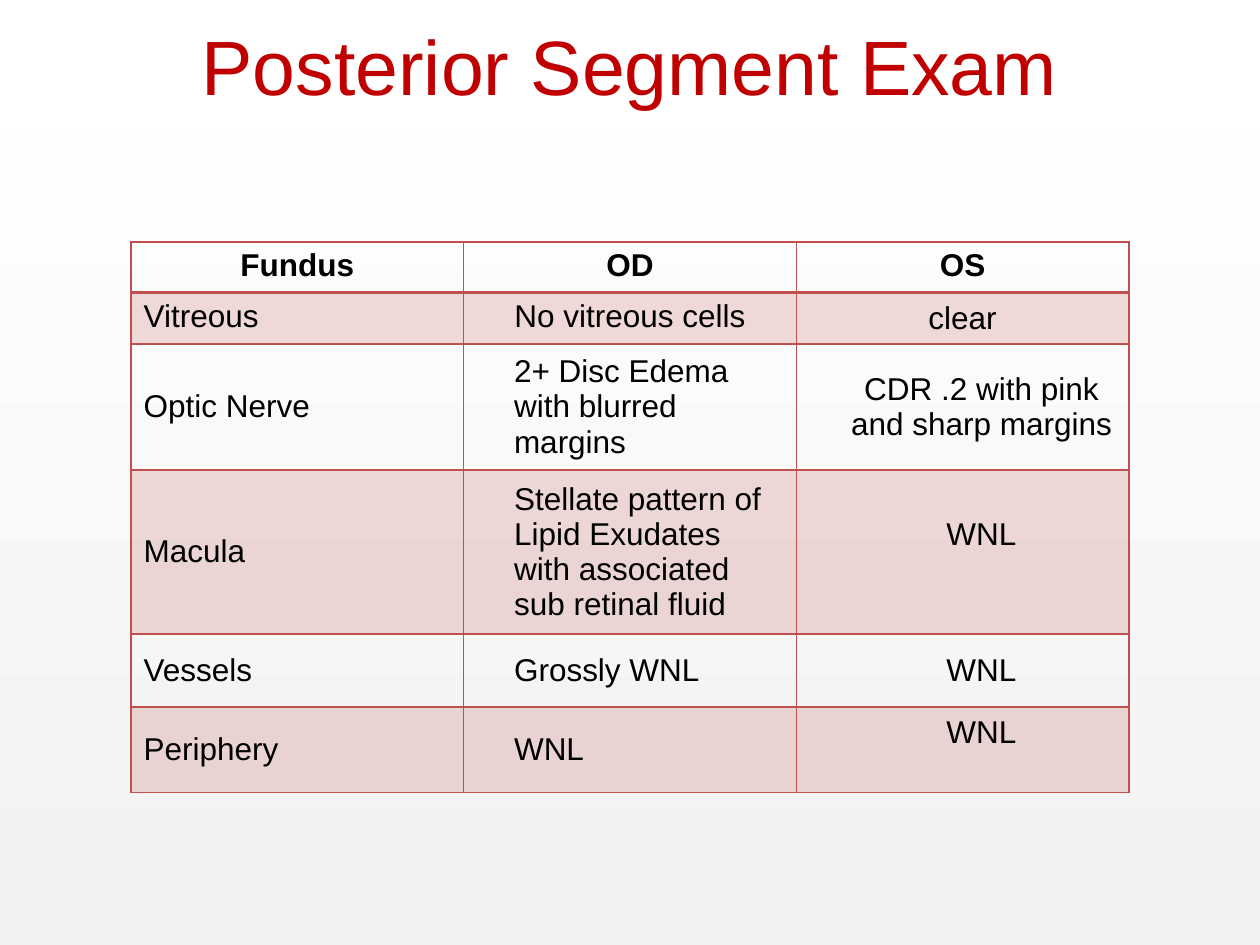
from lxml.etree import SubElement
from pptx import Presentation
from pptx.dml.color import RGBColor
from pptx.enum.shapes import MSO_SHAPE
from pptx.enum.text import MSO_ANCHOR, PP_ALIGN
from pptx.oxml.ns import qn
from pptx.util import Inches, Pt

COLORS = {"title": "C00000", "text": "000000", "accent": "C0504D",
          "page_bottom": "F2F2F2", "page_top": "FFFFFF"}
FONT = "Arial"
SLIDE_WIDTH, SLIDE_HEIGHT = 10, 7.5
INDENT = 0.4
LINE = 0.28
ROW_HEIGHTS = [0.4, 0.41, 0.94, 1.22, 0.58, 0.66]
FINDINGS = [
    ["Fundus", "OD", "OS"],
    ["Vitreous", "No vitreous cells", "clear"],
    ["Optic Nerve", "2+ Disc Edema with blurred margins", "CDR .2 with pink and sharp margins"],
    ["Macula", "Stellate pattern of Lipid Exudates with associated sub retinal fluid", "WNL"],
    ["Vessels", "Grossly WNL", "WNL"],
    ["Periphery", "WNL", "WNL"],
]
RAISED_CELLS = {(3, 2), (5, 2)}


def color(name):
    return RGBColor.from_string(COLORS[name])


def style_text(text_frame, text, size, color_name, alignment, bold=False):
    text_frame.text = text
    paragraph = text_frame.paragraphs[0]
    paragraph.alignment = alignment
    font = paragraph.runs[0].font
    font.name, font.size, font.bold = FONT, Pt(size), bold
    font.color.rgb = color(color_name)


def add_backdrop(slide, left, top, width, height):
    shape = slide.shapes.add_shape(MSO_SHAPE.RECTANGLE, Inches(left), Inches(top),
                                   Inches(width), Inches(height))
    shape.shadow.inherit = False
    shape.line.fill.background()
    shape.fill.gradient()
    shape.fill.gradient_angle = 90
    for stop, name, position in zip(shape.fill.gradient_stops, ("page_bottom", "page_top"), (0, 1)):
        stop.color.rgb = color(name)
        stop.position = position


def add_title(slide, left, top, width, height):
    shape = slide.shapes.add_textbox(Inches(left), Inches(top), Inches(width), Inches(height))
    text_frame = shape.text_frame
    text_frame.word_wrap = True
    text_frame.vertical_anchor = MSO_ANCHOR.MIDDLE
    style_text(text_frame, "Posterior Segment Exam", 44, "title", PP_ALIGN.CENTER)


def add_solid(parent, alpha=None):
    fill = SubElement(parent, qn("a:solidFill"))
    accent = SubElement(fill, qn("a:srgbClr"), val=COLORS["accent"])
    if alpha:
        SubElement(accent, qn("a:alpha"), val=str(alpha * 1000))


def style_cell_box(cell, row, banded):
    properties = cell._tc.get_or_add_tcPr()
    heavy_side = {0: "B", 1: "T"}.get(row)
    for side in "LRTB":
        points = 2 if side == heavy_side else 1
        border = SubElement(properties, qn(f"a:ln{side}"), w=str(Pt(points)))
        add_solid(border)
    if banded:
        add_solid(properties, alpha=20)
    else:
        SubElement(properties, qn("a:noFill"))


def style_cell(cell, row, column):
    header = row == 0
    centered = header or column == 2 or (row, column) == (1, 1)
    style_text(cell.text_frame, FINDINGS[row][column], 18, "text",
               PP_ALIGN.CENTER if centered else PP_ALIGN.LEFT, header)
    if row > 1 or (row, column) == (1, 2):
        cell.vertical_anchor = MSO_ANCHOR.MIDDLE
    if row > 1 and column > 0:
        cell.margin_left = Inches(INDENT)
    if (row, column) in RAISED_CELLS:
        cell.margin_bottom = Inches(0.05 + LINE)
    style_cell_box(cell, row, row % 2 == 1)


def add_findings_table(slide, left, top, width):
    row_count, column_count = len(FINDINGS), len(FINDINGS[0])
    frame = slide.shapes.add_table(row_count, column_count, Inches(left), Inches(top),
                                   Inches(width), Inches(sum(ROW_HEIGHTS)))
    table = frame.table
    table.first_row = table.horz_banding = False
    for column in table.columns:
        column.width = Inches(width / column_count)
    for row, height in enumerate(ROW_HEIGHTS):
        table.rows[row].height = Inches(height)
        for column in range(column_count):
            style_cell(table.cell(row, column), row, column)


def main():
    presentation = Presentation()
    presentation.slide_width = Inches(SLIDE_WIDTH)
    presentation.slide_height = Inches(SLIDE_HEIGHT)
    slide = presentation.slides.add_slide(presentation.slide_layouts[6])
    add_backdrop(slide, 0, 0, SLIDE_WIDTH, SLIDE_HEIGHT)
    add_title(slide, 0, -0.11, SLIDE_WIDTH, SLIDE_HEIGHT / 6)
    table_width = 7.92
    add_findings_table(slide, (SLIDE_WIDTH - table_width) / 2, 1.92, table_width)
    presentation.save("out.pptx")


if __name__ == "__main__":
    main()
